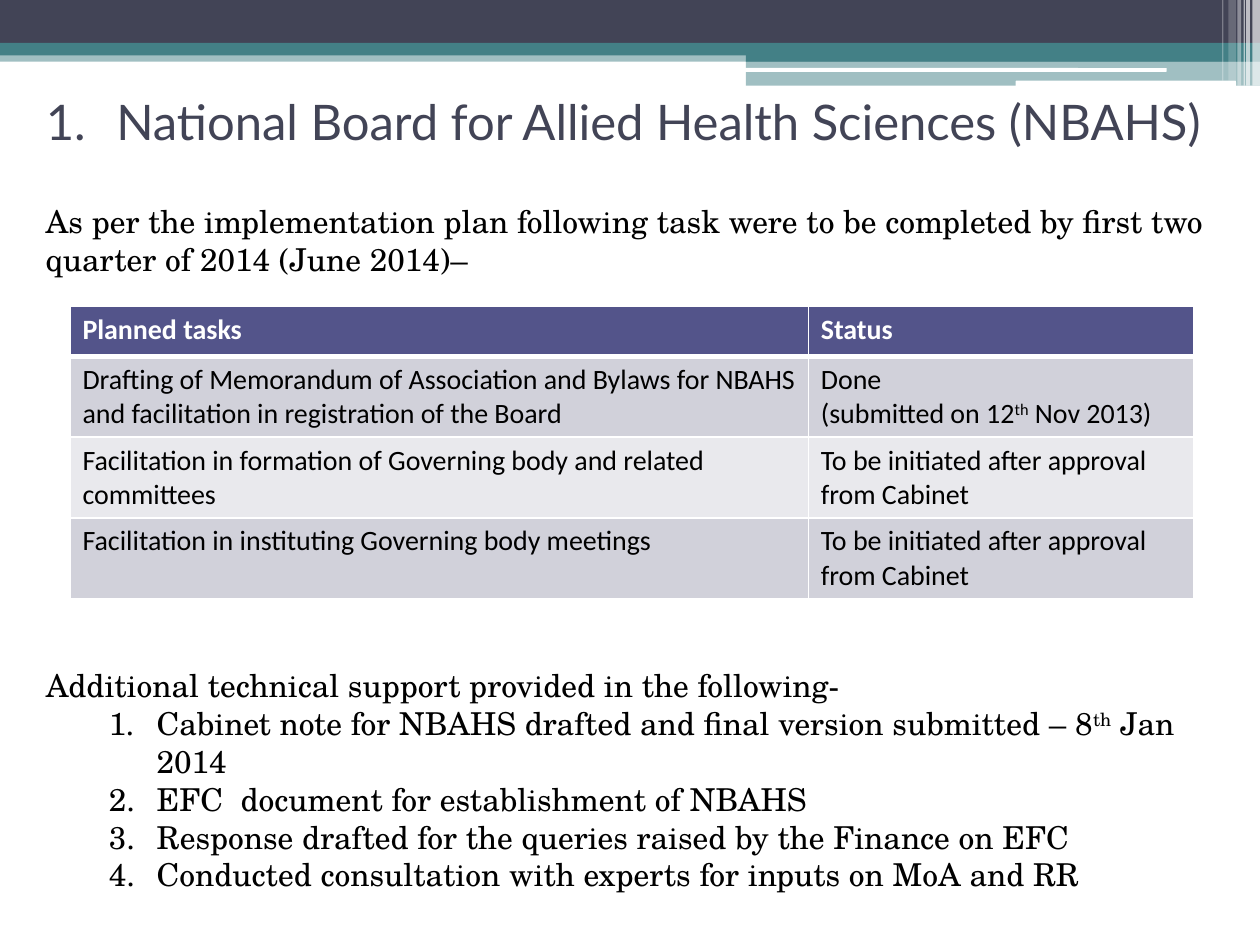
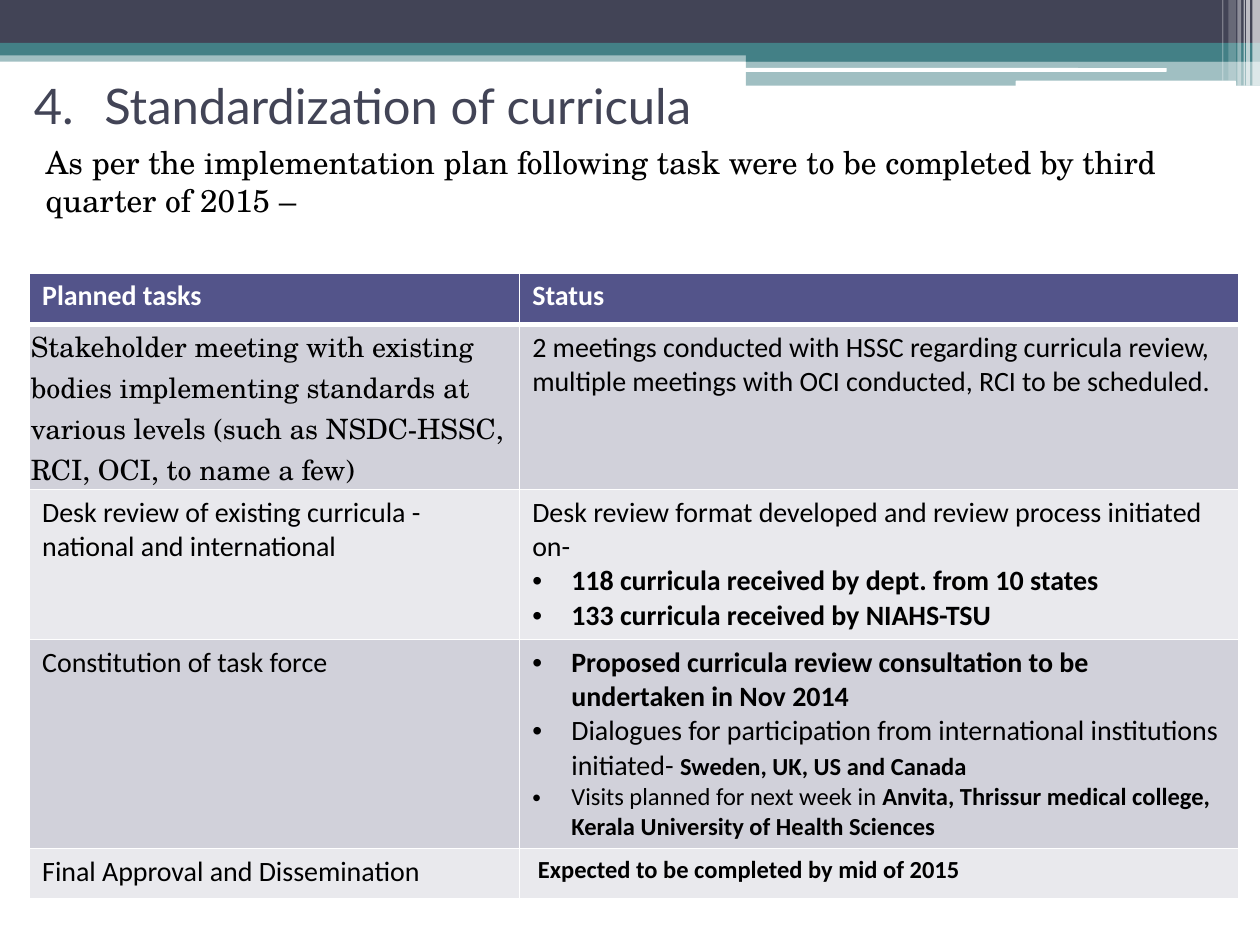
import pptx
import pptx.util
import pptx.dml.color
import pptx.enum.shapes
import pptx.enum.text
from dataclasses import dataclass
from lxml import etree


@dataclass(frozen=True)
class Theme:
    navy: str = "424456"
    teal: str = "438086"
    white: str = "FFFFFF"
    ink: str = "000000"
    header: str = "53548A"
    odd_row: str = "D1D1DA"
    even_row: str = "E9E9ED"
    title_font: str = "Lato"
    body_font: str = "TeX Gyre Schola"
    table_font: str = "Calibri"
    title_size: int = 28
    body_size: int = 18
    table_size: int = 16
    small_size: int = 14


THEME = Theme()
A = "http://schemas.openxmlformats.org/drawingml/2006/main"

deck = pptx.Presentation()
deck.slide_width = pptx.util.Inches(10)
deck.slide_height = pptx.util.Inches(7.5)
# The grid has 100 columns and 75 rows; its cells are square.
CELL = deck.slide_width // 100


def grid(*lengths):
    return [round(length * CELL) for length in lengths]


def write(frame, paragraphs, font, size, color, indent=(0, 0), start=1):
    """Fill frame with (marker, runs) paragraphs; a run is (text, changes)."""
    frame.word_wrap = True
    for number, (marker, runs) in enumerate(paragraphs):
        paragraph = frame.add_paragraph() if number else frame.paragraphs[0]
        if marker:
            properties = paragraph._p.get_or_add_pPr()
            margin, hang = grid(*indent)
            properties.set("marL", str(margin))
            properties.set("indent", str(-hang))
            if marker == "•":
                etree.SubElement(properties, f"{{{A}}}buFont", typeface="Arial")
                etree.SubElement(properties, f"{{{A}}}buChar", char=marker)
            else:
                etree.SubElement(properties, f"{{{A}}}buFont", typeface="+mj-lt")
                etree.SubElement(properties, f"{{{A}}}buAutoNum",
                                 type="arabicPeriod", startAt=str(start))
        for text, changes in runs:
            run = paragraph.add_run()
            run.text = text
            run.font.name = changes.get("font", font)
            run.font.size = pptx.util.Pt(changes.get("size", size))
            run.font.bold = changes.get("bold", False)
            run.font.color.rgb = pptx.dml.color.RGBColor.from_string(color)
            if "raised" in changes:
                run.font._element.set("baseline", "30000")


RECT = pptx.enum.shapes.MSO_SHAPE.RECTANGLE
ROUND = pptx.enum.shapes.MSO_SHAPE.ROUNDED_RECTANGLE

# Shape, place on the grid, colour, opacity in percent
BANDS = [
    (RECT, (0, 4, 100, 0.9), THEME.teal, 50),
    (RECT, (0, 0, 100, 3.4), THEME.navy, 100),
    (RECT, (0, 3.4, 100, 1), THEME.teal, 100),
    (RECT, (59.2, 3.9, 40.8, 1), THEME.teal, 100),
    (RECT, (59.2, 4.8, 40.8, 2), THEME.teal, 50),
    (ROUND, (59.1, 5.4, 33.5, 0.3), THEME.white, 100),
    (ROUND, (80.6, 6.4, 17.5, 0.45), THEME.white, 100),
]
# Left, width, height and opacity of the stripes in the top corner
BANDS += [
    (RECT, (left, 0, width, height), THEME.white, opacity)
    for left, width, height, opacity in [
        (99.4, 0.6, 6.8, 65), (98.9, 0.3, 6.8, 65), (98.7, 0.1, 6.8, 60),
        (98.2, 0.3, 6.8, 40), (97.5, 0.6, 6.4, 20), (97, 0.1, 6.4, 30),
    ]
]

PLAIN, BOLD, RAISED = {}, {"bold": True}, {"raised": True}
SMALL = {"size": THEME.small_size}
SMALL_BOLD = SMALL | BOLD
SCHOLA = {"font": THEME.body_font}
AFTER_CABINET = [(None, [("To be initiated after approval from Cabinet", PLAIN)])]
HEADINGS = [[(None, [(heading, BOLD)])] for heading in ("Planned tasks", "Status")]

SLIDES = [
    {
        "title": "National Board for Allied Health Sciences (NBAHS)",
        "title_at": (2.65, 5.85, 96.5, 7.5),
        "number": 1,
        "texts": [
            ((2.65, 15.55, 95, 7.1), [
                (None, [("As per the implementation plan following task were to be completed "
                         "by first two quarter of 2014 (June 2014)–", PLAIN)]),
            ]),
            ((2.65, 52.4, 93.2, 19.2), [
                (None, [("Additional technical support provided in the following-", PLAIN)]),
                ("1.", [("Cabinet note for NBAHS drafted and final version submitted – 8", PLAIN),
                        ("th", RAISED), (" Jan 2014", PLAIN)]),
                ("1.", [("EFC  document for establishment of NBAHS", PLAIN)]),
                ("1.", [("Response drafted for the queries raised by the Finance on EFC", PLAIN)]),
                ("1.", [("Conducted consultation with experts for inputs on MoA and RR", PLAIN)]),
            ]),
        ],
        "table_at": (5.55, 24.3),
        "columns": (58.6, 30.6),
        "rows": (4, 6.4, 6.4, 6.4),
        "tasks": [
            HEADINGS,
            [[(None, [("Drafting of Memorandum of Association and Bylaws for NBAHS and "
                       "facilitation in registration of the Board", PLAIN)])],
             [(None, [("Done", PLAIN)]),
              (None, [("(submitted on 12", PLAIN), ("th", RAISED), (" Nov 2013)", PLAIN)])]],
            [[(None, [("Facilitation in formation of Governing body and related committees",
                       PLAIN)])], AFTER_CABINET],
            [[(None, [("Facilitation in instituting Governing body meetings", PLAIN)])],
             AFTER_CABINET],
        ],
    },
    {
        "title": "Standardization of curricula",
        "title_at": (1.7, 2.5, 90, 11.7),
        "number": 4,
        "texts": [
            ((2.65, 10.85, 95, 7.1), [
                (None, [("As per the implementation plan following task were to be completed "
                         "by third quarter of 2015 –", PLAIN)]),
            ]),
        ],
        "table_at": (2.35, 21.65),
        "columns": (38.9, 57.1),
        "rows": (4.1, 13.1, 11.9, 16.6, 4),
        "tasks": [
            HEADINGS,
            [[(None, [("Stakeholder meeting with existing bodies implementing standards at "
                       "various levels (such as NSDC-HSSC, RCI, OCI, to name a few)", SCHOLA)])],
             [(None, [("2 meetings conducted with HSSC regarding curricula review, multiple "
                       "meetings with OCI conducted, RCI to be scheduled.", PLAIN)])]],
            [[(None, [("Desk review of existing curricula - national and international", PLAIN)])],
             [(None, [("Desk review format developed and review process initiated on-", PLAIN)]),
              ("•", [("118 curricula received by dept. from 10 states", BOLD)]),
              ("•", [("133 curricula received by NIAHS-TSU", BOLD)])]],
            [[(None, [("Constitution of task force", PLAIN)])],
             [("•", [("Proposed curricula review consultation to be undertaken in Nov 2014",
                      BOLD)]),
              ("•", [("Dialogues for participation from international institutions initiated- ",
                      PLAIN), ("Sweden, UK, US and Canada", SMALL_BOLD)]),
              ("•", [("Visits planned for next week in ", SMALL),
                     ("Anvita, Thrissur medical college, Kerala University of Health Sciences",
                      SMALL_BOLD)])]],
            [[(None, [("Final Approval and Dissemination", PLAIN)])],
             [(None, [(" Expected to be completed by mid of 2015", SMALL_BOLD)])]],
        ],
    },
]

for content in SLIDES:
    slide = deck.slides.add_slide(deck.slide_layouts[6])

    for outline, place, color, opacity in BANDS:
        band = slide.shapes.add_shape(outline, *grid(*place))
        band.shadow.inherit = False
        band.line.fill.background()
        band.fill.solid()
        band.fill.fore_color.rgb = pptx.dml.color.RGBColor.from_string(color)
        if opacity < 100:
            tint = band._element.spPr.find(f".//{{{A}}}srgbClr")
            etree.SubElement(tint, f"{{{A}}}alpha", val=str(opacity * 1000))

    title = slide.shapes.add_textbox(*grid(*content["title_at"]))
    title.text_frame.vertical_anchor = pptx.enum.text.MSO_ANCHOR.MIDDLE
    write(title.text_frame, [("1.", [(content["title"], PLAIN)])], THEME.title_font,
          THEME.title_size, THEME.navy, (5.6, 5.6), content["number"])

    tasks = content["tasks"]
    size = sum(content["columns"]), sum(content["rows"])
    table = slide.shapes.add_table(len(tasks), 2, *grid(*content["table_at"], *size)).table
    for column, width in zip(table.columns, grid(*content["columns"])):
        column.width = width
    for row, height in zip(table.rows, grid(*content["rows"])):
        row.height = height
    for r, task in enumerate(tasks):
        for c, paragraphs in enumerate(task):
            cell = table.cell(r, c)
            for side in "LRTB":
                thick = (r, side) in ((0, "B"), (1, "T"))
                edge = etree.SubElement(cell._tc.get_or_add_tcPr(), f"{{{A}}}ln{side}",
                                        w=str(pptx.util.Pt(3 if thick else 1)))
                paint = etree.SubElement(edge, f"{{{A}}}solidFill")
                etree.SubElement(paint, f"{{{A}}}srgbClr", val=THEME.white)
            shade = THEME.odd_row if r % 2 else THEME.even_row
            cell.fill.solid()
            cell.fill.fore_color.rgb = pptx.dml.color.RGBColor.from_string(
                shade if r else THEME.header)
            write(cell.text_frame, paragraphs, THEME.table_font, THEME.table_size,
                  THEME.ink if r else THEME.white, (3.1, 3.1))
            if paragraphs[0][1][0][1] is SCHOLA:
                cell.vertical_anchor = pptx.enum.text.MSO_ANCHOR.BOTTOM
                cell.margin_left, cell.margin_right, cell.margin_top = grid(0.1, 0.1, 0.1)
                cell.margin_bottom = 0

    for place, paragraphs in content["texts"]:
        passage = slide.shapes.add_textbox(*grid(*place))
        write(passage.text_frame, paragraphs, THEME.body_font, THEME.body_size,
              THEME.ink, (8.8, 3.8))

deck.save("out.pptx")
